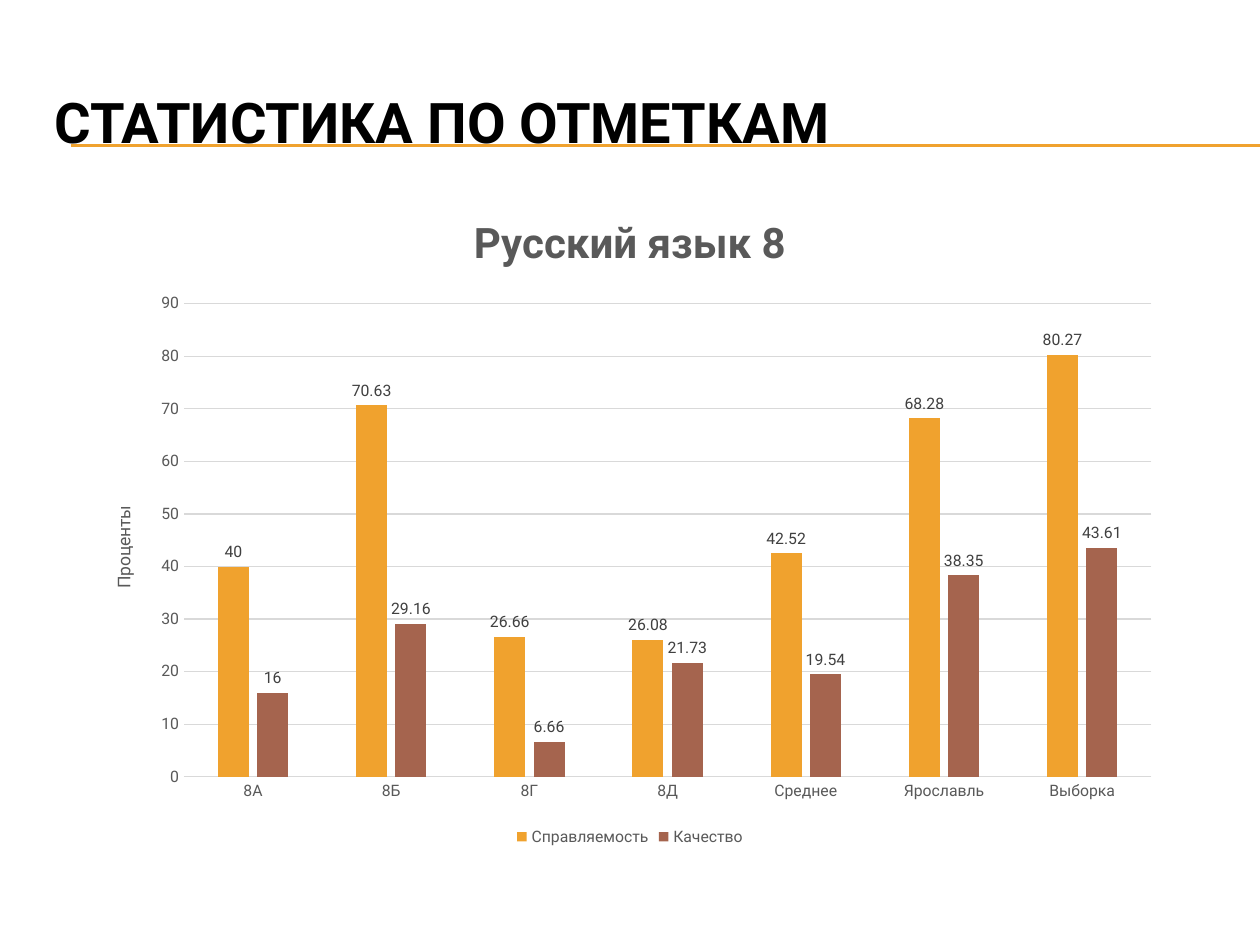
import pptx
import pptx.chart.data
import pptx.dml.color
import pptx.enum.chart
import pptx.enum.shapes
import pptx.enum.text
import pptx.oxml.ns
import pptx.util
from lxml import etree

TITLE = "СТАТИСТИКА ПО ОТМЕТКАМ"
CHART_TITLE = "Русский язык 8"
AXIS_TITLE = "Проценты"
CLASSES = ["8А", "8Б", "8Г", "8Д", "Среднее", "Ярославль", "Выборка"]
SERIES = [
    ("Справляемость", "F0A22E", [40, 70.63, 26.66, 26.08, 42.52, 68.28, 80.27]),
    ("Качество", "A5644E", [16, 29.16, 6.66, 21.73, 19.54, 38.35, 43.61]),
]
THEME = {
    "font": "Roboto",
    "black": "000000", "text": "595959", "label": "404040",
    "grid": "D9D9D9", "rule": "F0A22E",
    "title": 32, "chart_title": 24, "axis_title": 10, "small": 9, "line": 0.75,
}
SLIDE = (1260, 945)
TITLE_BOX = (42, 63, 1197, 116)
CHART_BOX = (87, 186, 1086, 665)
RULE_LEFT, RULE_TOPS = 71, (145, 146)


def px(n):
    return pptx.util.Emu(round(n * 914400 / 126))


def rgb(name):
    return pptx.dml.color.RGBColor.from_string(THEME.get(name, name))


def style_font(font, size, color, bold=False):
    font.name = THEME["font"]
    font.size = pptx.util.Pt(THEME[size])
    font.bold = bold
    font.color.rgb = rgb(color)


def style_line(line, color):
    line.color.rgb = rgb(color)
    line.width = pptx.util.Pt(THEME["line"])


def add_rule(slide, top):
    sp = slide.shapes.add_connector(
        pptx.enum.shapes.MSO_CONNECTOR.STRAIGHT,
        px(RULE_LEFT), px(top), px(SLIDE[0]), px(top))
    style_line(sp.line, "rule")
    etree.SubElement(sp._element.spPr, pptx.oxml.ns.qn("a:effectLst"))


def add_title(slide):
    sp = slide.shapes.add_textbox(*map(px, TITLE_BOX))
    tf = sp.text_frame
    tf.word_wrap = True
    tf.vertical_anchor = pptx.enum.text.MSO_ANCHOR.MIDDLE
    p = tf.paragraphs[0]
    p.text = TITLE
    style_font(p.font, "title", "black", True)


def set_title(owner, text, size, bold):
    tf = (owner.chart_title if hasattr(owner, "chart_title") else owner.axis_title).text_frame
    p = tf.paragraphs[0]
    p.text = text
    style_font(p.font, size, "text", bold)


def add_chart(slide):
    data = pptx.chart.data.CategoryChartData()
    data.categories = CLASSES
    for name, _, values in SERIES:
        data.add_series(name, values)
    chart = slide.shapes.add_chart(
        pptx.enum.chart.XL_CHART_TYPE.COLUMN_CLUSTERED,
        *map(px, CHART_BOX), data).chart
    style_font(chart.font, "axis_title", "black")
    set_title(chart, CHART_TITLE, "chart_title", True)
    chart.chart_title.include_in_layout = False

    chart.has_legend = True
    chart.legend.position = pptx.enum.chart.XL_LEGEND_POSITION.BOTTOM
    chart.legend.include_in_layout = False
    style_font(chart.legend.font, "small", "text")

    for axis in (chart.category_axis, chart.value_axis):
        axis.major_tick_mark = pptx.enum.chart.XL_TICK_MARK.NONE
        axis.minor_tick_mark = pptx.enum.chart.XL_TICK_MARK.NONE
        style_font(axis.tick_labels.font, "small", "text")
    style_line(chart.category_axis.format.line, "grid")
    axis = chart.value_axis
    axis.minimum_scale, axis.maximum_scale, axis.major_unit = 0, 90, 10
    axis.format.line.fill.background()
    style_line(axis.major_gridlines.format.line, "grid")
    set_title(axis, AXIS_TITLE, "axis_title", False)

    plot = chart.plots[0]
    plot.gap_width, plot.overlap = 219, -27
    plot.vary_by_categories = False
    for series, (_, color, _) in zip(plot.series, SERIES):
        series.format.fill.solid()
        series.format.fill.fore_color.rgb = rgb(color)
        series.invert_if_negative = False
        labels = series.data_labels
        labels.show_value = True
        labels.position = pptx.enum.chart.XL_LABEL_POSITION.OUTSIDE_END
        style_font(labels.font, "small", "label")


def main():
    prs = pptx.Presentation()
    prs.slide_width, prs.slide_height = map(px, SLIDE)
    slide = prs.slides.add_slide(prs.slide_layouts[6])
    for top in RULE_TOPS:
        add_rule(slide, top)
    add_title(slide)
    add_chart(slide)
    prs.save("out.pptx")


if __name__ == "__main__":
    main()
